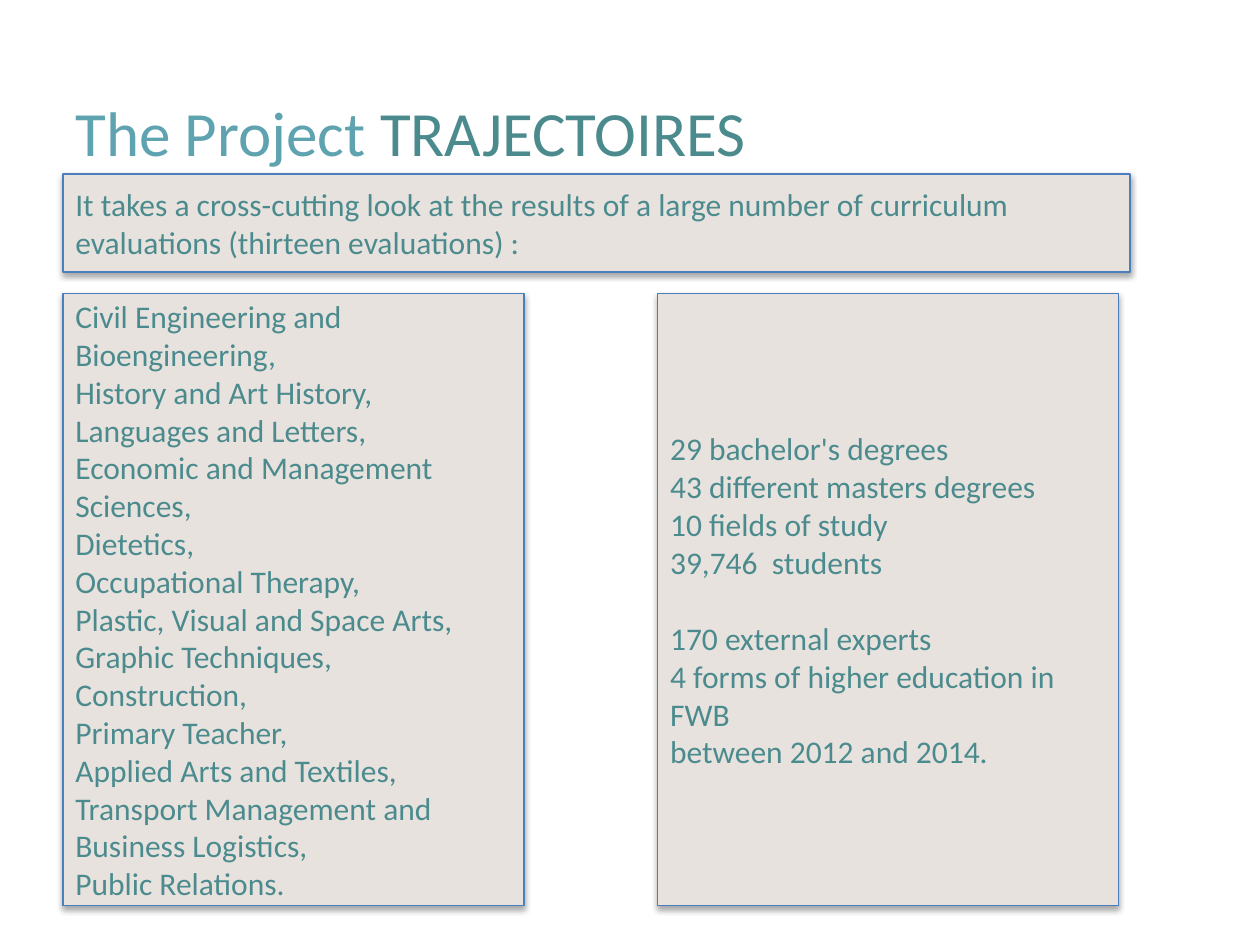
"""Build the slide presenting the scope of the TRAJECTOIRES project."""
from pptx import Presentation
from pptx.dml.color import RGBColor
from pptx.enum.shapes import MSO_SHAPE
from pptx.enum.text import MSO_ANCHOR, PP_ALIGN
from pptx.util import Inches, Pt

RECTANGLE = MSO_SHAPE.RECTANGLE
MIDDLE = MSO_ANCHOR.MIDDLE
LEFT = PP_ALIGN.LEFT

FONT = "Calibri"
COLORS = {
    "title": "5FA3B0",
    "text": "4B8B8E",
    "panel": "E8E2DE",
    "border": "4B7EBC",
}

SUMMARY = [
    "It takes a cross-cutting look at the results of a large number of "
    "curriculum evaluations (thirteen evaluations) :",
]
FIELDS = [
    "Civil Engineering and Bioengineering,",
    "History and Art History,",
    "Languages and Letters,",
    "Economic and Management Sciences,",
    "Dietetics,",
    "Occupational Therapy,",
    "Plastic, Visual and Space Arts,",
    "Graphic Techniques,",
    "Construction,",
    "Primary Teacher,",
    "Applied Arts and Textiles,",
    "Transport Management and Business Logistics,",
    "Public Relations.",
]
SCOPE = [
    "29 bachelor's degrees",
    "43 different masters degrees",
    "10 fields of study",
    "39,746  students",
    "170 external experts",
    "4 forms of higher education in FWB",
    "between 2012 and 2014.",
]
SECOND_GROUP_START = "170 external experts"

PANELS = [
    (0.5, 2.33, 3.66, 4.86, FIELDS),
    (5.22, 2.33, 3.66, 4.86, SCOPE),
    (0.5, 1.38, 8.47, 0.78, SUMMARY),
]


def color(name):
    return RGBColor.from_string(COLORS[name])


prs = Presentation()
prs.slide_width = Inches(10)
prs.slide_height = Inches(7.5)
slide = prs.slides.add_slide(prs.slide_layouts[5])

title = slide.shapes.title
title.left, title.top = Inches(0.5), Inches(0.7)
title.width, title.height = Inches(9), Inches(0.68)
title.text_frame.vertical_anchor = MIDDLE
heading = title.text_frame.paragraphs[0]
heading.alignment = LEFT
heading.font.name = FONT
heading.font.size = Pt(36)
for words, tone in (("The Project ", "title"), ("TRAJECTOIRES", "text")):
    run = heading.add_run()
    run.text = words
    run.font.color.rgb = color(tone)

for left, top, width, height, lines in PANELS:
    panel = slide.shapes.add_shape(
        RECTANGLE, Inches(left), Inches(top), Inches(width), Inches(height)
    )
    panel.fill.solid()
    panel.fill.fore_color.rgb = color("panel")
    panel.line.color.rgb = color("border")
    panel.line.width = Pt(0.75)
    frame = panel.text_frame
    frame.word_wrap = True
    frame.vertical_anchor = MIDDLE
    frame.text = "\n".join(lines)
    for paragraph in frame.paragraphs:
        paragraph.alignment = LEFT
        paragraph.font.name = FONT
        paragraph.font.size = Pt(18)
        paragraph.font.color.rgb = color("text")
        if paragraph.text == SECOND_GROUP_START:
            paragraph.space_before = Pt(22)

prs.save("out.pptx")
